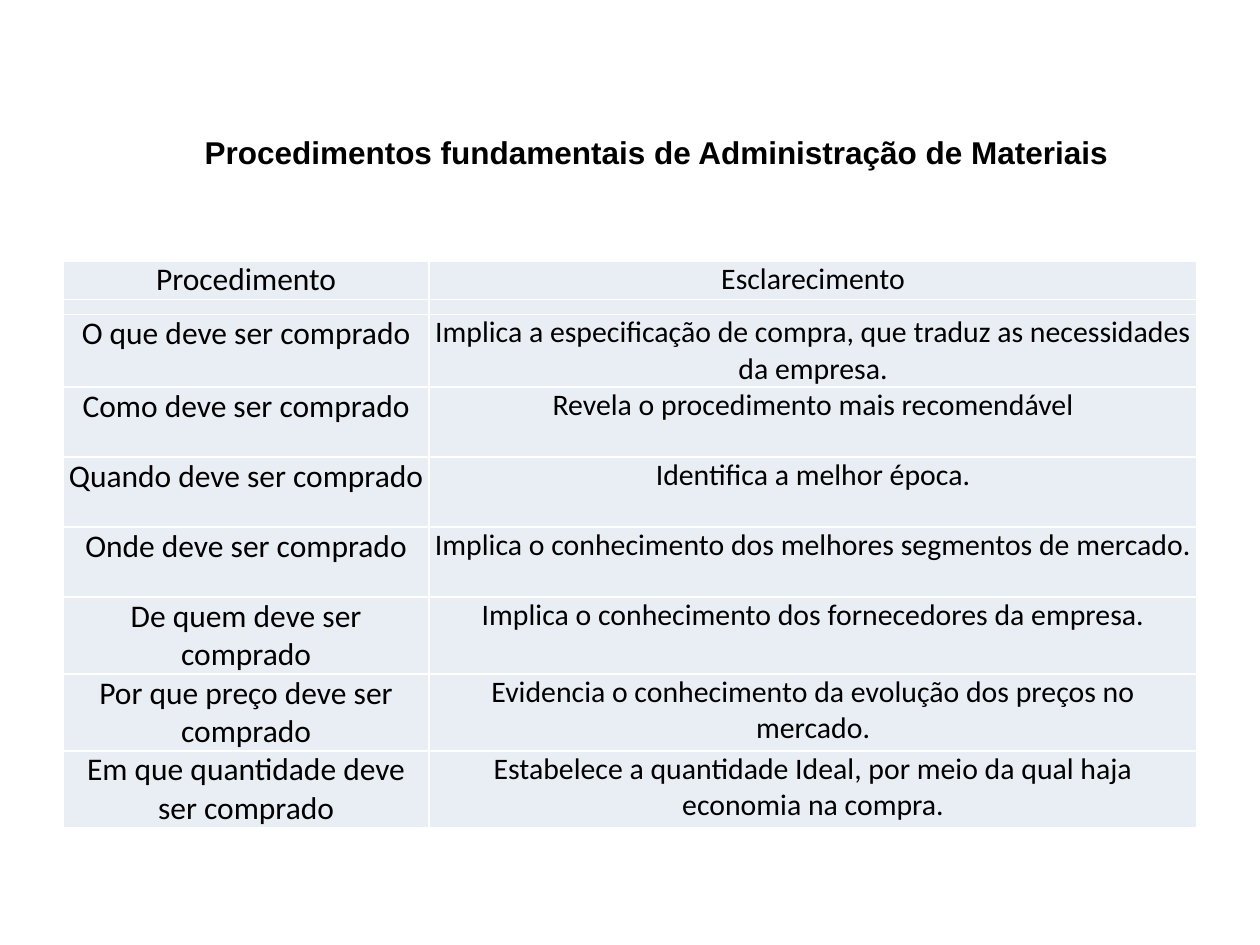
from dataclasses import dataclass

from lxml.etree import SubElement
from pptx import Presentation
from pptx.dml.color import RGBColor
from pptx.enum.text import MSO_ANCHOR, MSO_AUTO_SIZE, PP_ALIGN
from pptx.oxml.ns import qn
from pptx.util import Cm, Pt


@dataclass(frozen=True)
class Theme:
    text: str = "000000"
    cell: str = "E9EDF4"
    border: str = "FFFFFF"
    title_font: str = "Arial"
    body_font: str = "Calibri"
    title_size: int = 18
    column_sizes: tuple = (18, 17)
    spacer_size: int = 6
    border_width: int = 1


THEME = Theme()

HEADER = ("Procedimento", "Esclarecimento")
SPACER = ("", "")
PROCEDURES = [
    ("O que deve ser comprado",
     "Implica a especificação de compra, que traduz as necessidades da empresa."),
    ("Como deve ser comprado", "Revela o procedimento mais recomendável"),
    ("Quando deve ser comprado", "Identifica a melhor época."),
    ("Onde deve ser comprado",
     "Implica o conhecimento dos melhores segmentos de mercado."),
    ("De quem deve ser comprado",
     "Implica o conhecimento dos fornecedores da empresa."),
    ("Por que preço deve ser comprado",
     "Evidencia o conhecimento da evolução dos preços no mercado."),
    ("Em que quantidade deve ser comprado",
     "Estabelece a quantidade Ideal, por meio da qual haja economia na compra."),
]
ROW_HEIGHTS = [0.76, 0.3, 1.47] + [1.41] * 3 + [1.55] * 3  # cm
FIRST_COLUMN_SHARE = 0.323


def style_paragraph(p, font, size, bold=False):
    p.alignment = PP_ALIGN.CENTER
    p.font.name = font
    p.font.size = Pt(size)
    p.font.bold = bold
    p.font.color.rgb = RGBColor.from_string(THEME.text)


def add_title(s, left, top, width, height):
    sp = s.shapes.title
    sp.left, sp.top, sp.width, sp.height = left, top, width, height
    tf = sp.text_frame
    tf.text = "Procedimentos fundamentais de Administração de Materiais"
    tf.word_wrap = True
    tf.auto_size = MSO_AUTO_SIZE.NONE
    tf.vertical_anchor = MSO_ANCHOR.MIDDLE
    tf.margin_left, tf.margin_right = Cm(1.24), Cm(0.25)
    tf.margin_top, tf.margin_bottom = Cm(0.13), Cm(0.72)
    style_paragraph(tf.paragraphs[0], THEME.title_font, THEME.title_size, bold=True)


def set_borders(cell):
    tc_pr = cell._tc.get_or_add_tcPr()
    for side in ("lnL", "lnR", "lnT", "lnB"):
        line = SubElement(tc_pr, qn(f"a:{side}"), w=str(Pt(THEME.border_width)))
        fill = SubElement(line, qn("a:solidFill"))
        SubElement(fill, qn("a:srgbClr"), val=THEME.border)


def fill_cell(cell, text, size):
    set_borders(cell)  # borders precede the fill in the cell properties
    cell.fill.solid()
    cell.fill.fore_color.rgb = RGBColor.from_string(THEME.cell)
    cell.margin_left = cell.margin_right = Cm(0.1)
    cell.margin_top = cell.margin_bottom = 0
    cell.vertical_anchor = MSO_ANCHOR.TOP
    cell.text = text
    p = cell.text_frame.paragraphs[0]
    style_paragraph(p, THEME.body_font, size)
    if not text:
        # The end mark sets the height of an empty cell
        SubElement(p._p, qn("a:endParaRPr"), sz=str(size * 100))


def add_procedure_table(s, left, top, width):
    rows = [HEADER, SPACER, *PROCEDURES]
    height = Cm(sum(ROW_HEIGHTS))
    table = s.shapes.add_table(len(rows), 2, left, top, width, height).table
    table.first_row = table.horz_banding = False
    table.columns[0].width = int(width * FIRST_COLUMN_SHARE)
    table.columns[1].width = width - table.columns[0].width
    for i, (texts, row_height) in enumerate(zip(rows, ROW_HEIGHTS)):
        table.rows[i].height = Cm(row_height)
        for j, (text, size) in enumerate(zip(texts, THEME.column_sizes)):
            fill_cell(table.cell(i, j), text, size if text else THEME.spacer_size)


def main():
    prs = Presentation()
    prs.slide_width, prs.slide_height = Cm(25.4), Cm(19.05)
    s = prs.slides.add_slide(prs.slide_layouts[5])  # title only
    add_procedure_table(s, Cm(1.27), Cm(5.26), Cm(22.86))
    add_title(s, Cm(1.35), Cm(2.51), Cm(22.78), Cm(1.68))
    prs.save("out.pptx")


if __name__ == "__main__":
    main()
